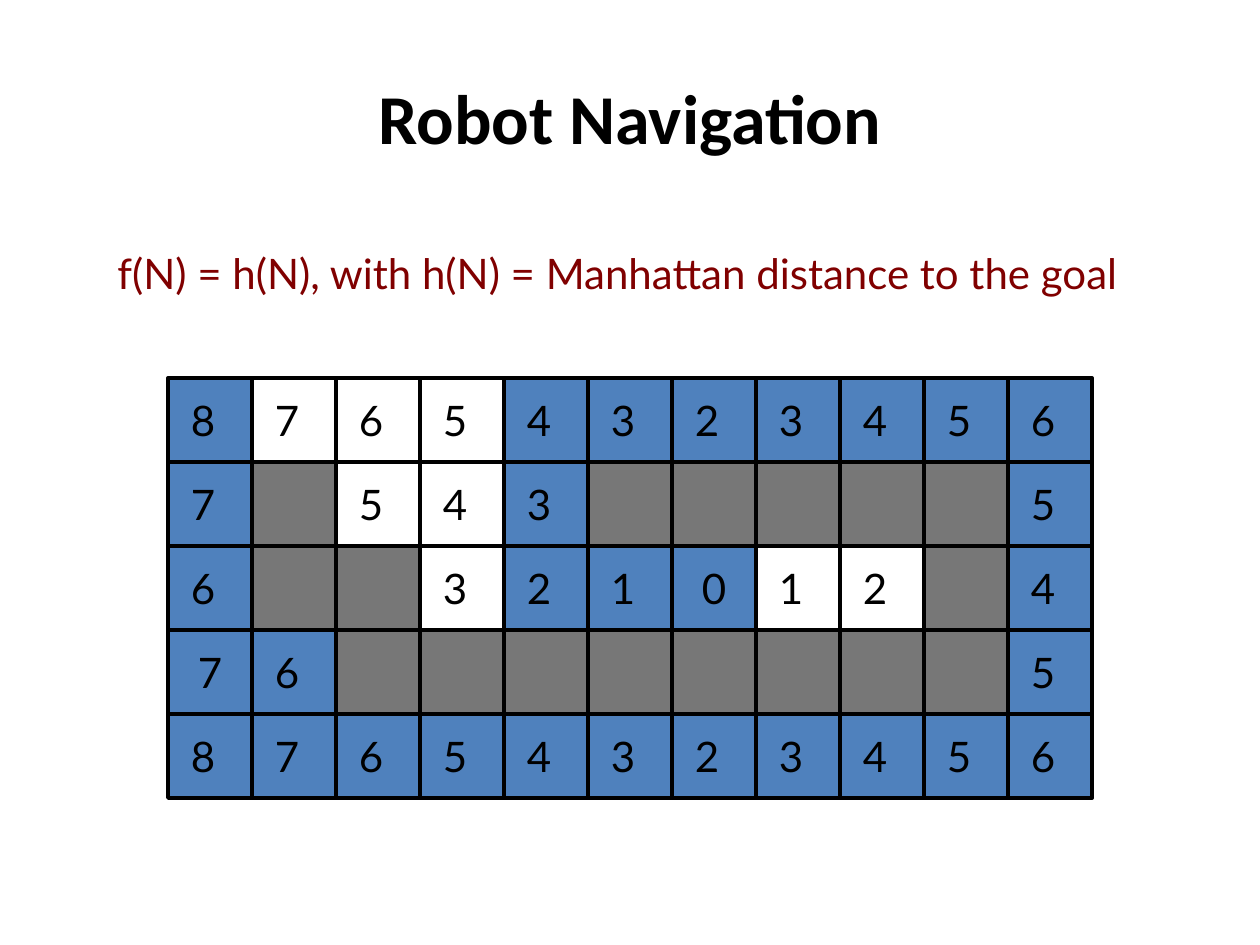
from dataclasses import dataclass
from typing import Any

from lxml.etree import SubElement
from pptx import Presentation
from pptx.dml.color import RGBColor
from pptx.enum.shapes import MSO_CONNECTOR as CONN, MSO_SHAPE as SHAPE
from pptx.enum.text import MSO_ANCHOR as ANCHOR, MSO_AUTO_SIZE as FIT, PP_ALIGN as ALIGN
from pptx.oxml.ns import qn
from pptx.util import Pt

DISTANCES = (
    "87654323456",
    "7#543#####5",
    "6##321012#4",
    "76########5",
    "87654323456",
)
VISITED = {(0, 1), (0, 2), (0, 3), (1, 2), (1, 3), (2, 3), (2, 7), (2, 8)}
ENDPOINTS = {(3, 0), (2, 6)}
CELL, LEFT, TOP = 48, 96, 216
COLS, ROWS = len(DISTANCES[0]), len(DISTANCES)


@dataclass
class Theme:
    ink: str = "000000"
    free: str = "4F81BD"
    wall: str = "777777"
    accent: str = "800000"
    heading_font: str = "Calibri"
    body_font: str = "Lato"
    heading_size: float = 40
    body_size: float = 24
    thin: float = 0.75
    thick: float = 2.25


def set_attrs(obj, values):
    for name, value in values.items():
        setattr(obj, name, value)


@dataclass
class SlideBuilder:
    theme: Theme
    s: Any

    def add_run(self, tf, text, color=None, align=None, **font):
        p = tf.paragraphs[0]
        p.alignment = align
        r = p.add_run()
        r.text = text
        t = self.theme
        set_attrs(r.font, {"name": t.body_font, "size": Pt(t.body_size), **font})
        r.font.color.rgb = RGBColor.from_string(color or t.ink)

    def outline(self, line, width):
        line.color.rgb = RGBColor.from_string(self.theme.ink)
        line.width = Pt(width)

    def title(self, text, x, y, w, h):
        sp = self.s.shapes.title
        set_attrs(sp, {"left": Pt(x), "top": Pt(y), "width": Pt(w), "height": Pt(h)})
        sp.text_frame.vertical_anchor = ANCHOR.MIDDLE
        t = self.theme
        self.add_run(sp.text_frame, text, align=ALIGN.CENTER,
                     name=t.heading_font, size=Pt(t.heading_size), bold=True)

    def text(self, text, x, y, w, h, color=None):
        tf = self.s.shapes.add_textbox(Pt(x), Pt(y), Pt(w), Pt(h)).text_frame
        set_attrs(tf, {"word_wrap": False, "auto_size": FIT.SHAPE_TO_FIT_TEXT})
        self.add_run(tf, text, color)

    def rect(self, x, y, w, h, width, fill=None, text=None):
        sp = self.s.shapes.add_shape(SHAPE.RECTANGLE, Pt(x), Pt(y), Pt(w), Pt(h))
        sp.shadow.inherit = False
        if fill:
            sp.fill.solid()
            sp.fill.fore_color.rgb = RGBColor.from_string(fill)
        else:
            sp.fill.background()
        self.outline(sp.line, width)
        if text:
            set_attrs(sp.text_frame, {"word_wrap": False, "vertical_anchor": ANCHOR.MIDDLE})
            self.add_run(sp.text_frame, text, align=ALIGN.CENTER)

    def line(self, x1, y1, x2, y2):
        c = self.s.shapes.add_connector(CONN.STRAIGHT, Pt(x1), Pt(y1), Pt(x2), Pt(y2))
        self.outline(c.line, self.theme.thick)
        SubElement(c._element.spPr, qn("a:effectLst"))

    def cell(self, row, col, width, fill, text=None):
        self.rect(LEFT + col * CELL, TOP + row * CELL, CELL, CELL, width, fill, text)

    def grid(self):
        right, bottom = LEFT + COLS * CELL, TOP + ROWS * CELL
        self.rect(LEFT, TOP, right - LEFT, bottom - TOP, self.theme.thick)
        for col in range(1, COLS):
            x = LEFT + col * CELL
            self.line(x, TOP, x, bottom)
        for row in range(1, ROWS):
            y = TOP + row * CELL
            self.line(LEFT, y, right, y)


def main():
    prs = Presentation()
    set_attrs(prs, {"slide_width": Pt(720), "slide_height": Pt(540)})
    t = Theme()
    slide = SlideBuilder(t, prs.slides.add_slide(prs.slide_layouts[5]))
    cells = {(row, col): value for row, values in enumerate(DISTANCES)
             for col, value in enumerate(values)}
    walls = {pos for pos, value in cells.items() if value == "#"}

    slide.title("Robot Navigation", 36, 21.6, 648, 90)
    for pos in cells:
        if pos not in walls | VISITED | ENDPOINTS:
            slide.cell(*pos, t.thin, t.free)
    slide.grid()
    for pos in sorted(walls):
        slide.cell(*pos, t.thick, t.wall)
    for (row, col), value in cells.items():
        if (row, col) in ENDPOINTS:
            slide.cell(row, col, t.thick, t.free, value)
        elif (row, col) not in walls:
            slide.text(value, LEFT + col * CELL + 6, TOP + row * CELL + 6, 27, 36)
    slide.text("f(N) = h(N), with h(N) = Manhattan distance to the goal",
               60, 138, 613.5, 36, t.accent)
    prs.save("out.pptx")


if __name__ == "__main__":
    main()
